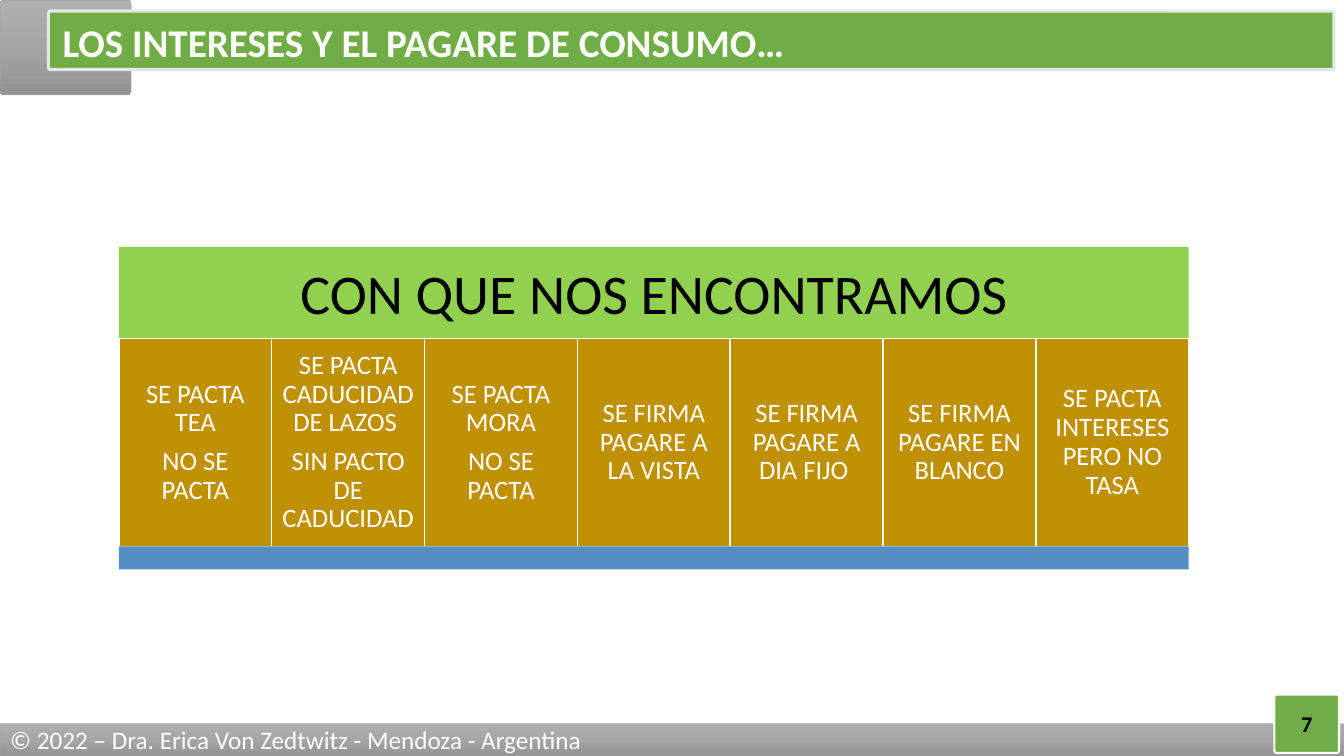
from copy import deepcopy

from pptx import Presentation
from pptx.dml.color import RGBColor
from pptx.enum.shapes import MSO_SHAPE as Shape
from pptx.enum.text import MSO_ANCHOR as Anchor, PP_ALIGN as Align
from pptx.util import Inches, Pt

WIDTH, HEIGHT = 13.33, 7.5
FONT = "Calibri"
GREEN, LIME, GOLD, BLUE = "70AD47", "92D050", "BF9000", "538DC1"
WHITE, BLACK, GRAY, PALE = "FFFFFF", "000000", "A5A5A5", "E7E6E6"
GRAY_GRADIENT = [(0, "AFAFAF"), (0.5, "A5A5A5"), (1, "939393")]

TITLE = "LOS INTERESES Y EL PAGARE DE CONSUMO…"
FOOTER = "© 2022 – Dra. Erica Von Zedtwitz - Mendoza - Argentina"
PAGE_NUMBER = "7"
HEADING = "CON QUE NOS ENCONTRAMOS"
COLUMNS = [
    ["SE PACTA TEA", "NO SE PACTA"],
    ["SE PACTA CADUCIDAD DE LAZOS ", "SIN PACTO DE CADUCIDAD"],
    ["SE PACTA MORA", "NO SE PACTA"],
    ["SE FIRMA PAGARE A LA VISTA"],
    ["SE FIRMA PAGARE A DIA FIJO "],
    ["SE FIRMA PAGARE EN BLANCO"],
    ["SE PACTA INTERESES PERO NO TASA"],
]

TABLE_LEFT, TABLE_TOP, TABLE_WIDTH = 1.18, 2.45, 10.61
HEADING_HEIGHT, COLUMN_TOP, COLUMN_HEIGHT, BASE_HEIGHT = 0.98, 3.36, 2.06, 0.23
COLUMN_WIDTH = TABLE_WIDTH / len(COLUMNS)


def color(value):
    return RGBColor.from_string(value)


def fill_gradient(shape, colors):
    shape.fill.gradient()
    shape.fill.gradient_angle = 270
    stop_list = shape.element.spPr.find(".//{*}gsLst")
    stop_list.insert(1, deepcopy(stop_list[0]))
    for stop, (position, value) in zip(shape.fill.gradient_stops, colors):
        stop.position = position
        stop.color.rgb = color(value)


def add_box(kind, left, top, width, height, fill, line=None, line_width=1):
    shape = slide.shapes.add_shape(
        kind, Inches(left), Inches(top), Inches(width), Inches(height))
    shape.shadow.inherit = False
    if kind == Shape.ROUNDED_RECTANGLE:
        shape.adjustments[0] = 0.038
    if isinstance(fill, list):
        fill_gradient(shape, fill)
    else:
        shape.fill.solid()
        shape.fill.fore_color.rgb = color(fill)
    if line:
        shape.line.color.rgb = color(line)
        shape.line.width = Pt(line_width)
    else:
        shape.line.fill.background()
    return shape


def write(shape, lines, size, ink, align=Align.CENTER, bold=False,
          inset=None, spacing=None, after=0):
    frame = shape.text_frame
    frame.word_wrap = True
    frame.vertical_anchor = Anchor.MIDDLE
    if inset is not None:
        frame.margin_left = frame.margin_right = Inches(inset)
        frame.margin_top = frame.margin_bottom = Inches(inset)
    for index, line in enumerate(lines):
        paragraph = frame.add_paragraph() if index else frame.paragraphs[0]
        paragraph.alignment = align
        paragraph.line_spacing = spacing
        paragraph.space_before = Pt(0)
        paragraph.space_after = Pt(after)
        run = paragraph.add_run()
        run.text = line
        run.font.name = FONT
        run.font.size = Pt(size)
        run.font.bold = bold
        run.font.color.rgb = color(ink)


presentation = Presentation()
presentation.slide_width = Inches(WIDTH)
presentation.slide_height = Inches(HEIGHT)
slide = presentation.slides.add_slide(presentation.slide_layouts[5])

rounded = Shape.ROUNDED_RECTANGLE
add_box(rounded, 0, 0, 1.3, 0.94, GRAY_GRADIENT, GRAY, 0.5)
add_box(rounded, 0.48, 0.11, 12.75, 0.58, GREEN, PALE, 2.25)
footer = add_box(rounded, 0, 7.18, WIDTH, 0.32, GRAY_GRADIENT, GRAY, 0.5)
write(footer, [FOOTER], 18, WHITE, Align.LEFT)
page_box = add_box(rounded, 12.64, 6.89, 0.64, 0.58, GREEN, WHITE, 1.5)
write(page_box, [PAGE_NUMBER], 16, BLACK, bold=True)

heading = add_box(Shape.RECTANGLE, TABLE_LEFT, TABLE_TOP, TABLE_WIDTH,
                  HEADING_HEIGHT, LIME)
write(heading, [HEADING], 40, BLACK, inset=0.17, spacing=0.9)
for index, lines in enumerate(COLUMNS):
    column = add_box(Shape.RECTANGLE, TABLE_LEFT + index * COLUMN_WIDTH,
                     COLUMN_TOP, COLUMN_WIDTH, COLUMN_HEIGHT, GOLD, WHITE)
    write(column, lines, 19, WHITE, inset=0.08, spacing=0.9, after=7)
add_box(Shape.RECTANGLE, TABLE_LEFT, COLUMN_TOP + COLUMN_HEIGHT,
        TABLE_WIDTH, BASE_HEIGHT, BLUE)

title = slide.shapes.title
title.left, title.top = Inches(0.52), Inches(0.2)
title.width, title.height = Inches(12.7), Inches(0.49)
write(title, [TITLE], 28, WHITE, Align.LEFT, bold=True, spacing=0.9)
slide.shapes.element.append(title.element)

presentation.save("out.pptx")
